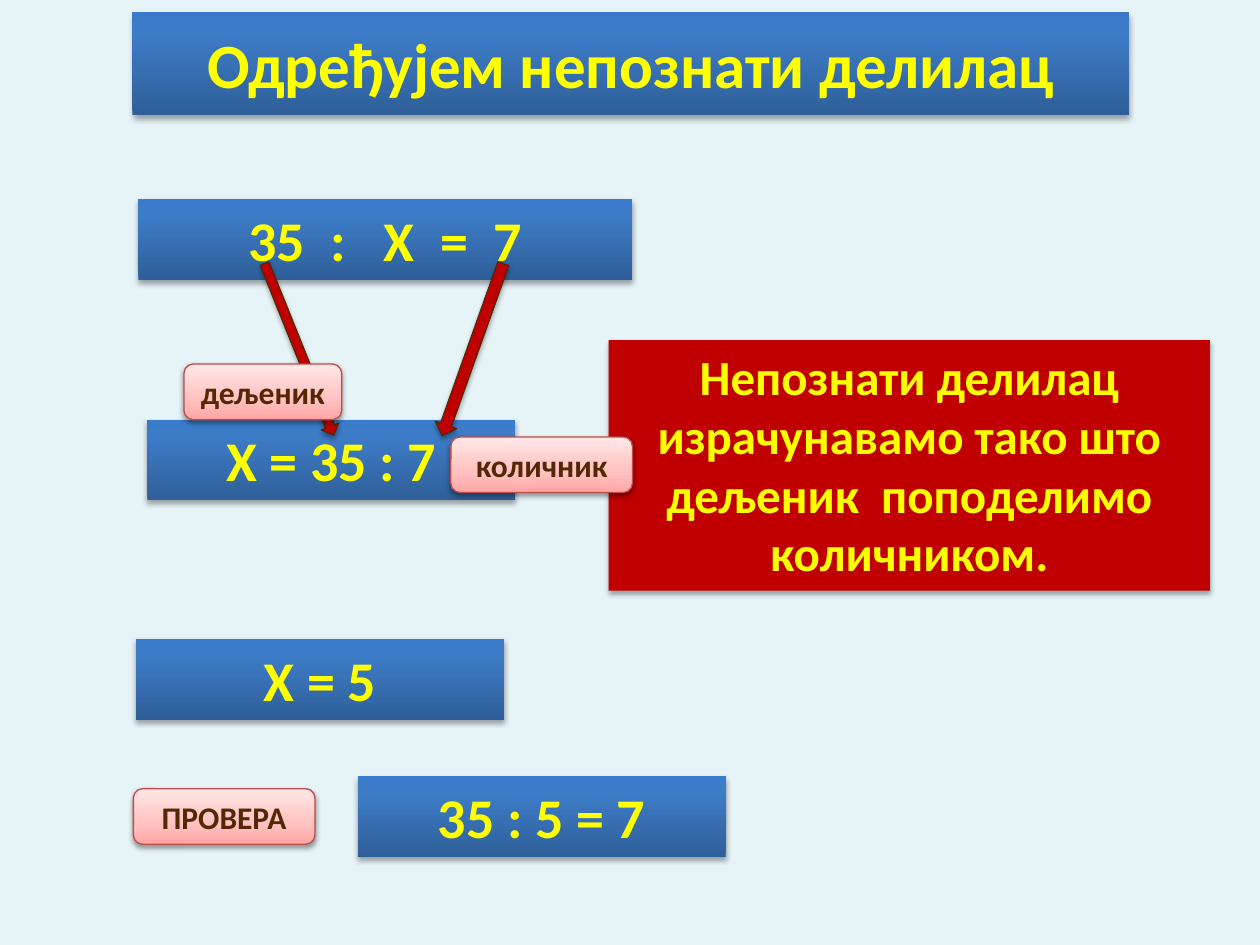
from copy import deepcopy
from dataclasses import dataclass

from lxml.etree import SubElement
from pptx import Presentation
from pptx.dml.color import RGBColor
from pptx.enum.shapes import MSO_SHAPE
from pptx.enum.text import MSO_ANCHOR, MSO_AUTO_SIZE, PP_ALIGN
from pptx.oxml.ns import qn
from pptx.shapes.autoshape import Shape
from pptx.slide import Slide
from pptx.util import Cm, Pt

BACKGROUND = RGBColor(0xE6, 0xF3, 0xF7)
YELLOW = RGBColor(0xFF, 0xFF, 0x00)
RED = RGBColor(0xC0, 0x00, 0x00)
BROWN = RGBColor(0x54, 0x28, 0x04)
PINK_BORDER = RGBColor(0xBF, 0x4C, 0x48)
BLUE_STOPS = (
    (0, RGBColor(0x2F, 0x5F, 0x99)),
    (0.8, RGBColor(0x3D, 0x7C, 0xC7)),
    (1, RGBColor(0x3A, 0x7C, 0xCB)),
)
PINK_STOPS = (
    (0, RGBColor(0xFF, 0xA6, 0xA5)),
    (0.35, RGBColor(0xFF, 0xC0, 0xBF)),
    (1, RGBColor(0xFF, 0xE7, 0xE7)),
)
FONT_NAME = "Calibri"
BOX_HEIGHT = 1.63
LABEL_HEIGHT = 1.12


@dataclass
class TextBlock:
    text: str
    left: float
    top: float
    width: float


@dataclass
class Arrow:
    left: float
    top: float
    width: float
    height: float
    rotation: float


EQUATIONS = (
    TextBlock("35  :   Х  =  7", 2.79, 4.01, 9.96),
    TextBlock("Х = 35 : 7", 2.97, 8.46, 7.42),
    TextBlock("35 : 5 = 7", 7.21, 15.65, 7.42),
    TextBlock("Х = 5", 2.74, 12.88, 7.42),
)
ARROWS = (
    Arrow(9.3, 5.21, 0.46, 3.68, 19.6),
    Arrow(5.84, 5.18, 0.38, 3.73, 338.1),
)
LABELS = (
    TextBlock("дељеник", 3.71, 7.34, 3.18),
    TextBlock("количник", 9.09, 8.81, 3.66),
    TextBlock("ПРОВЕРА", 2.69, 15.9, 3.66),
)
RULE = TextBlock(
    "Непознати делилац израчунавамо тако што дељеник  поподелимо\nколичником.",
    12.27, 6.86, 12.12,
)


def fill_gradient(shape: Shape, stops: tuple) -> None:
    shape.fill.gradient()
    shape.fill.gradient_angle = 90
    stop_list = shape.element.spPr.find(".//" + qn("a:gsLst"))
    stop_list.append(deepcopy(stop_list[0]))
    for stop, (position, color) in zip(shape.fill.gradient_stops, stops):
        stop.position = position
        stop.color.rgb = color


def fill_solid(shape: Shape, color: RGBColor) -> None:
    shape.fill.solid()
    shape.fill.fore_color.rgb = color


def set_border(shape: Shape, color: RGBColor) -> None:
    shape.line.color.rgb = color
    shape.line.width = Pt(0.75)


def add_shadow(shape: Shape, opacity: int = 35, distance: float = 1.8) -> None:
    shape.shadow.inherit = False
    effects = shape.element.spPr.find(qn("a:effectLst"))
    shadow = SubElement(
        effects, qn("a:outerShdw"), blurRad=str(Pt(3.1)),
        dist=str(Pt(distance)), dir="5400000", rotWithShape="0",
    )
    color = SubElement(shadow, qn("a:srgbClr"), val="000000")
    SubElement(color, qn("a:alpha"), val=str(opacity * 1000))


def write_text(shape: Shape, text: str, size: int, color: RGBColor,
               anchor: MSO_ANCHOR = MSO_ANCHOR.MIDDLE) -> None:
    frame = shape.text_frame
    frame.text = text
    frame.word_wrap = True
    frame.auto_size = MSO_AUTO_SIZE.NONE
    frame.vertical_anchor = anchor
    for paragraph in frame.paragraphs:
        paragraph.alignment = PP_ALIGN.CENTER
        paragraph.font.name = FONT_NAME
        paragraph.font.size = Pt(size)
        paragraph.font.bold = True
        paragraph.font.color.rgb = color


def add_block(slide: Slide, kind: MSO_SHAPE, block: TextBlock, height: float) -> Shape:
    return slide.shapes.add_shape(
        kind, Cm(block.left), Cm(block.top), Cm(block.width), Cm(height)
    )


def format_title(slide: Slide) -> None:
    title = slide.shapes.title
    title.left, title.top = Cm(2.67), Cm(0.25)
    title.width, title.height = Cm(20.09), Cm(2.06)
    geometry = SubElement(title.element.spPr, qn("a:prstGeom"), prst="roundRect")
    SubElement(geometry, qn("a:avLst"))
    fill_gradient(title, BLUE_STOPS)
    add_shadow(title)
    write_text(title, "Одређујем непознати делилац", 36, YELLOW)


def add_equation(slide: Slide, block: TextBlock) -> None:
    shape = add_block(slide, MSO_SHAPE.RECTANGLE, block, BOX_HEIGHT)
    fill_gradient(shape, BLUE_STOPS)
    shape.line.fill.background()
    add_shadow(shape)
    write_text(shape, block.text, 32, YELLOW, MSO_ANCHOR.TOP)


def add_rule(slide: Slide, block: TextBlock) -> None:
    shape = add_block(slide, MSO_SHAPE.RECTANGLE, block, 5.05)
    fill_solid(shape, RED)
    shape.line.fill.background()
    add_shadow(shape)
    write_text(shape, block.text, 28, YELLOW, MSO_ANCHOR.TOP)


def add_arrow(slide: Slide, arrow: Arrow) -> None:
    shape = slide.shapes.add_shape(
        MSO_SHAPE.DOWN_ARROW, Cm(arrow.left), Cm(arrow.top),
        Cm(arrow.width), Cm(arrow.height),
    )
    shape.rotation = arrow.rotation
    fill_solid(shape, RED)
    set_border(shape, BROWN)
    add_shadow(shape)


def add_label(slide: Slide, block: TextBlock) -> None:
    shape = add_block(slide, MSO_SHAPE.ROUNDED_RECTANGLE, block, LABEL_HEIGHT)
    fill_gradient(shape, PINK_STOPS)
    set_border(shape, PINK_BORDER)
    add_shadow(shape, 38, 1.6)
    write_text(shape, block.text, 18, BROWN)


def main() -> None:
    presentation = Presentation()
    presentation.slide_width, presentation.slide_height = Cm(25.4), Cm(19.05)
    slide = presentation.slides.add_slide(presentation.slide_layouts[5])
    slide.background.fill.solid()
    slide.background.fill.fore_color.rgb = BACKGROUND
    format_title(slide)
    add_rule(slide, RULE)
    for equation in EQUATIONS:
        add_equation(slide, equation)
    for arrow in ARROWS:
        add_arrow(slide, arrow)
    for label in LABELS:
        add_label(slide, label)
    presentation.save("out.pptx")


if __name__ == "__main__":
    main()
